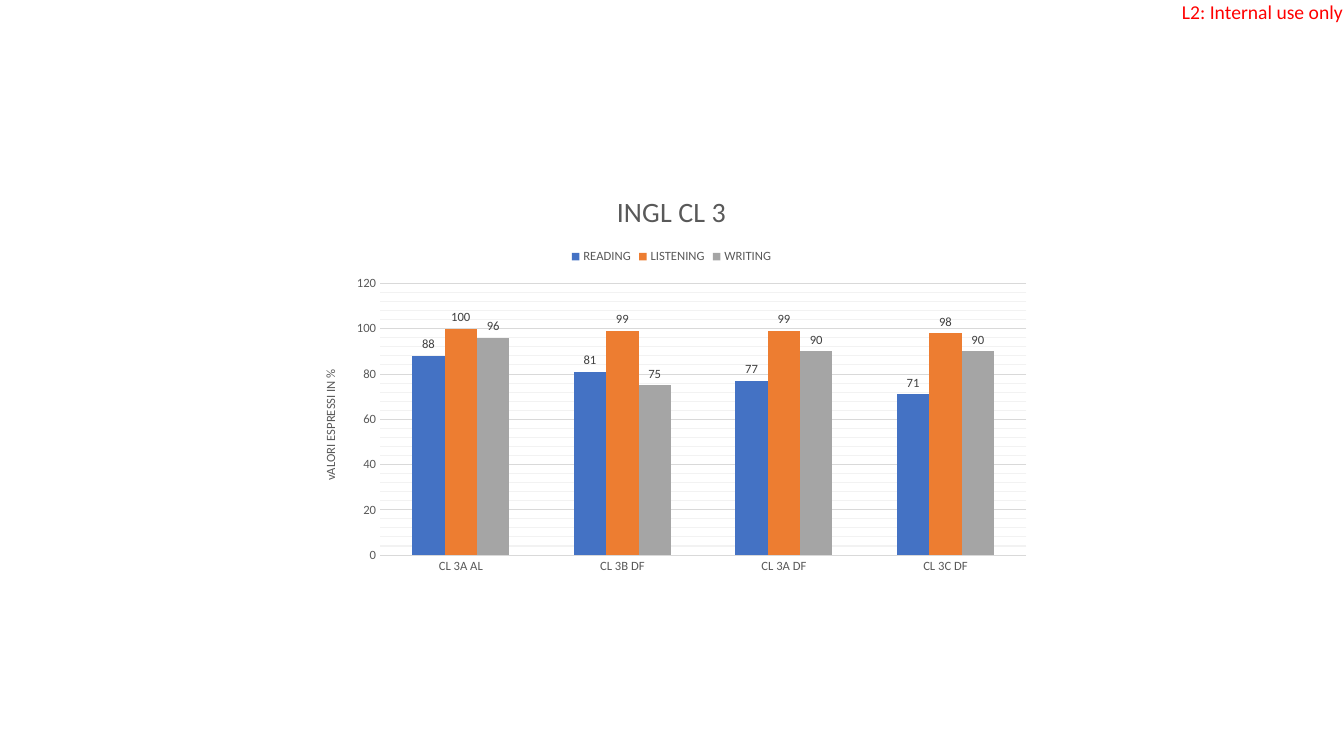
from copy import deepcopy

from pptx import Presentation
from pptx.chart.data import CategoryChartData
from pptx.dml.color import RGBColor
from pptx.enum.chart import (XL_CHART_TYPE, XL_LABEL_POSITION,
                             XL_LEGEND_POSITION, XL_TICK_MARK)
from pptx.oxml.ns import qn
from pptx.util import Pt

PX = 914400 / 100.8
FONT = "Calibri"
HUES = {
    "note": "FF0000", "text": "595959", "label": "404040",
    "grid": "D9D9D9", "minor": "F2F2F2",
    "READING": "4472C4", "LISTENING": "ED7D31", "WRITING": "A5A5A5",
}
CLASSES = ["CL 3A AL", "CL 3B DF", "CL 3A DF", "CL 3C DF"]
SCORES = {
    "READING": [88, 81, 77, 71],
    "LISTENING": [100, 99, 99, 98],
    "WRITING": [96, 75, 90, 90],
}


def px(num):
    return round(num * PX)


def hue(key):
    return RGBColor.from_string(HUES[key])


def style(font, size=9, color="text"):
    font.name = FONT
    font.size = Pt(size)
    font.bold = False
    font.color.rgb = hue(color)


def write(frame, text, **form):
    para = frame.paragraphs[0]
    run = para.add_run()
    run.text = text
    style(run.font, **form)


def rule(line, color):
    line.color.rgb = hue(color)
    line.width = Pt(0.75)


def add_note(slide, box):
    frame = slide.shapes.add_textbox(*map(px, box)).text_frame
    frame.margin_left = frame.margin_right = 0
    frame.margin_top = frame.margin_bottom = 0
    frame.word_wrap = True
    write(frame, "L2: Internal use only", size=14, color="note")


def set_grid(axis):
    axis.has_major_gridlines = axis.has_minor_gridlines = True
    line = axis.major_gridlines.format.line
    rule(line, "minor")
    root = axis._element
    major = root.find(qn("c:majorGridlines"))
    minor = root.find(qn("c:minorGridlines"))
    minor.append(deepcopy(major.find(qn("c:spPr"))))
    rule(line, "grid")


def set_axes(chart):
    for axis in (chart.category_axis, chart.value_axis):
        axis.major_tick_mark = XL_TICK_MARK.NONE
        axis.minor_tick_mark = XL_TICK_MARK.NONE
        style(axis.tick_labels.font)
    rule(chart.category_axis.format.line, "grid")
    scale = chart.value_axis
    scale.minimum_scale, scale.maximum_scale = 0, 120
    scale.major_unit, scale.minor_unit = 20, 4
    set_grid(scale)
    scale.format.line.fill.background()
    scale.tick_labels.number_format = "0"
    scale.tick_labels.number_format_is_linked = False
    write(scale.axis_title.text_frame, "vALORI ESPRESSI IN %")


def set_bars(plot):
    plot.gap_width = 199
    plot.overlap = 0
    plot.vary_by_categories = False
    for bars in plot.series:
        bars.format.fill.solid()
        bars.format.fill.fore_color.rgb = hue(bars.name)
        labels = bars.data_labels
        labels.show_value = True
        labels.position = XL_LABEL_POSITION.OUTSIDE_END
        labels.number_format = "0"
        labels.number_format_is_linked = False
        style(labels.font, color="label")


def add_scores(slide, box):
    data = CategoryChartData(number_format="0")
    data.categories = CLASSES
    for name, values in SCORES.items():
        data.add_series(name, values)
    chart = slide.shapes.add_chart(
        XL_CHART_TYPE.COLUMN_CLUSTERED, *map(px, box), data).chart
    style(chart.font, size=10)
    write(chart.chart_title.text_frame, "INGL CL 3", size=20)
    chart.has_legend = True
    chart.legend.position = XL_LEGEND_POSITION.TOP
    chart.legend.include_in_layout = False
    style(chart.legend.font)
    set_axes(chart)
    set_bars(chart.plots[0])


def main():
    deck = Presentation()
    deck.slide_width, deck.slide_height = px(1344), px(756)
    slide = deck.slides.add_slide(deck.slide_layouts[6])
    add_note(slide, (1182, 0, 165, 23))
    add_scores(slide, (302, 173, 739, 409))
    deck.save("out.pptx")


if __name__ == "__main__":
    main()
